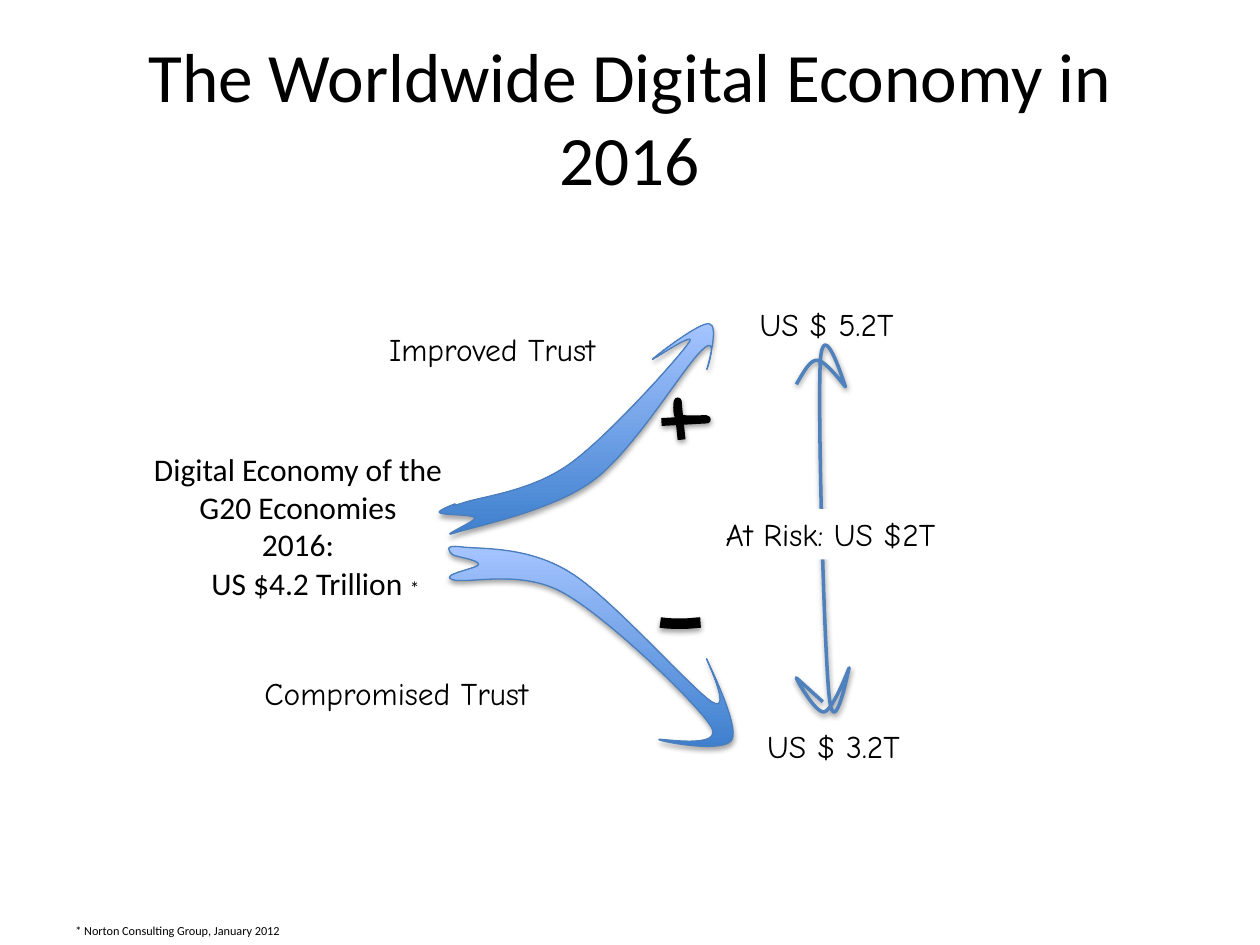
from dataclasses import dataclass

from lxml import etree
from pptx import Presentation
from pptx.dml.color import RGBColor
from pptx.enum.shapes import MSO_SHAPE
from pptx.enum.text import MSO_ANCHOR, PP_ALIGN
from pptx.oxml.ns import qn
from pptx.util import Inches, Pt

TOP, MIDDLE = MSO_ANCHOR.TOP, MSO_ANCHOR.MIDDLE
LEFT, CENTER = PP_ALIGN.LEFT, PP_ALIGN.CENTER
RECTANGLE = MSO_SHAPE.RECTANGLE

COLORS = {
    "text": "000000",
    "paper": "FFFFFF",
    "deep": "3F80CE",
    "pale": "A4C4FF",
    "edge": "4B7EBC",
    "range": "4F81BD",
}
BODY_FONT, HAND_FONT = "Calibri", "Comic Neue"


@dataclass
class Label:
    lines: list[str]
    left: float
    top: float
    width: float
    height: float = 0.4
    font: str = HAND_FONT
    size: float = 18
    align: PP_ALIGN = LEFT
    boxed: bool = False
    mark: str = ""


@dataclass
class Stroke:
    """An outline: a segment of two numbers is a line, one of six a cubic curve."""
    box: tuple[float, float, float, float]
    start: tuple[float, float]
    segments: list[tuple[float, ...]]
    color: str
    weight: float
    filled: bool = False


RISING_ARROW = Stroke((3.48, 2.57, 2.18, 1.67), (3.61, 4), [
    (3.64, 3.99, 3.53, 4.04, 3.68, 3.99), (3.83, 3.94, 4.21, 3.9, 4.51, 3.69),
    (4.8, 3.49, 5.35, 2.88, 5.46, 2.73), (5.57, 2.59, 5.15, 2.88, 5.18, 2.85),
    (5.21, 2.82, 5.56, 2.55, 5.63, 2.57), (5.71, 2.58, 5.62, 2.9, 5.61, 2.93),
    (5.6, 2.97, 5.72, 2.63, 5.57, 2.78), (5.42, 2.92, 5.03, 3.58, 4.7, 3.82),
    (4.37, 4.06, 3.76, 4.18, 3.61, 4.23), (3.45, 4.28, 3.79, 4.13, 3.77, 4.11),
    (3.75, 4.08, 3.51, 4.09, 3.49, 4.07), (3.46, 4.06, 3.58, 4.01, 3.61, 4),
], "edge", 0.75, filled=True)

FALLING_ARROW = Stroke((3.56, 4.34, 2.26, 1.58), (3.66, 4.34), [
    (3.81, 4.36, 4.18, 4.33, 4.52, 4.54), (4.85, 4.74, 5.47, 5.45, 5.65, 5.57),
    (5.83, 5.68, 5.58, 5.18, 5.61, 5.23), (5.63, 5.28, 5.87, 5.76, 5.81, 5.87),
    (5.75, 5.98, 5.26, 5.89, 5.23, 5.87), (5.2, 5.85, 5.77, 5.96, 5.64, 5.76),
    (5.52, 5.57, 4.82, 4.9, 4.48, 4.71), (4.14, 4.51, 3.7, 4.64, 3.59, 4.6),
    (3.48, 4.56, 3.8, 4.51, 3.8, 4.48), (3.8, 4.44, 3.61, 4.42, 3.59, 4.4),
    (3.57, 4.38, 3.51, 4.32, 3.66, 4.34),
], "edge", 0.75, filled=True)

RISK_RANGE = Stroke((6.32, 2.74, 0.42, 2.91), (6.32, 3.05), [
    (6.38, 2.95, 6.43, 2.85, 6.49, 2.86), (6.55, 2.86, 6.71, 3.07, 6.71, 3.07),
    (6.71, 3.08, 6.53, 2.47, 6.51, 2.88), (6.49, 3.29, 6.54, 5.12, 6.58, 5.52),
    (6.62, 5.92, 6.74, 5.28, 6.74, 5.3), (6.73, 5.32, 6.61, 5.64, 6.54, 5.65),
    (6.47, 5.66, 6.32, 5.39, 6.32, 5.38), (6.31, 5.37, 6.53, 5.57, 6.53, 5.57),
], "range", 2)

PLUS = Stroke((5.25, 3.18, 0.36, 0.3), (5.25, 3.35), [
    (5.61, 3.33), (5.63, 3.32, 5.44, 3.34, 5.4, 3.32),
    (5.36, 3.3, 5.38, 3.16, 5.38, 3.19), (5.38, 3.22, 5.41, 3.49, 5.41, 3.49),
], "text", 4.5)

MINUS = Stroke((5.24, 4.94, 0.32, 0.02), (5.24, 4.94), [
    (5.3, 4.95, 5.36, 4.95, 5.42, 4.95), (5.47, 4.95, 5.54, 4.94, 5.56, 4.94),
], "text", 6)

# Back to front: the boxed label interrupts the risk range.
DIAGRAM = [
    Label(["Digital Economy of the G20 Economies", "2016:"], 1.07, 3.52, 2.59, 1.01,
          BODY_FONT, align=CENTER),
    Label(["US $4.2 Trillion "], 1.58, 4.43, 1.93, font=BODY_FONT, mark="*"),
    RISING_ARROW,
    FALLING_ARROW,
    Label(["Improved Trust"], 2.99, 2.57, 2.27),
    Label(["Compromised Trust"], 2, 5.3, 2.86),
    Label(["US $ 5.2T"], 5.93, 2.37, 2.13),
    Label(["US $ 3.2T"], 5.99, 5.72, 2.13),
    RISK_RANGE,
    Label(["At Risk: US $2T"], 5.66, 4.04, 2.49, boxed=True),
    PLUS,
    MINUS,
    Label(["* Norton Consulting Group, January 2012"], 0.5, 7.28, 1.84, 0.22, BODY_FONT, 7),
]


def rgb(name: str) -> RGBColor:
    return RGBColor.from_string(COLORS[name])


def format_run(run, font: str, size: float) -> None:
    run.font.name = font
    run.font.size = Pt(size)
    run.font.color.rgb = rgb("text")


def draw_label(slide, label: Label) -> None:
    place = [Inches(v) for v in (label.left, label.top, label.width, label.height)]
    if label.boxed:
        box = slide.shapes.add_shape(RECTANGLE, *place)
        box.shadow.inherit = False
        box.fill.solid()
        box.fill.fore_color.rgb = rgb("paper")
        box.line.fill.background()
    else:
        box = slide.shapes.add_textbox(*place)
    frame = box.text_frame
    frame.word_wrap = True
    frame.vertical_anchor = TOP
    frame.text = "\n".join(label.lines)
    for paragraph in frame.paragraphs:
        paragraph.alignment = label.align
        format_run(paragraph.runs[0], label.font, label.size)
    if label.mark:
        footnote_mark = frame.paragraphs[0].add_run()
        footnote_mark.text = label.mark
        format_run(footnote_mark, label.font, 11)


def trace_outline(shape, stroke: Stroke) -> None:
    """Put the stroke's lines and cubic curves in the freeform's geometry."""
    left, top, width, height = stroke.box
    outline = shape._element.spPr.find(".//" + qn("a:path"))
    for segment in list(outline):
        outline.remove(segment)
    outline.set("w", str(Inches(width)))
    outline.set("h", str(Inches(height)))

    def add_segment(tag: str, coordinates: tuple[float, ...]) -> None:
        segment = etree.SubElement(outline, qn(tag))
        for x, y in zip(coordinates[::2], coordinates[1::2]):
            etree.SubElement(segment, qn("a:pt"), x=str(Inches(x - left)),
                             y=str(Inches(y - top)))

    add_segment("a:moveTo", stroke.start)
    for coordinates in stroke.segments:
        add_segment("a:lnTo" if len(coordinates) == 2 else "a:cubicBezTo", coordinates)
    if stroke.filled:
        etree.SubElement(outline, qn("a:close"))


def add_soft_shadow(shape, opacity: int, distance: float) -> None:
    shape.shadow.inherit = False
    effects = shape._element.spPr.find(qn("a:effectLst"))
    shadow = etree.SubElement(effects, qn("a:outerShdw"), blurRad=str(Pt(3.1)),
                              dist=str(Pt(distance)), dir="5400000", rotWithShape="0")
    color = etree.SubElement(shadow, qn("a:srgbClr"), val=COLORS["text"])
    etree.SubElement(color, qn("a:alpha"), val=str(opacity * 1000))


def draw_stroke(slide, stroke: Stroke) -> None:
    left, top, width, height = stroke.box
    builder = slide.shapes.build_freeform(Inches(left), Inches(top))
    builder.add_line_segments([(Inches(left + width), Inches(top + height))], close=False)
    shape = builder.convert_to_shape()
    trace_outline(shape, stroke)
    if stroke.filled:
        shape.fill.gradient()
        shape.fill.gradient_angle = 90
        for stop, name in zip(shape.fill.gradient_stops, ("deep", "pale")):
            stop.color.rgb = rgb(name)
    else:
        shape.fill.background()
    shape.line.color.rgb = rgb(stroke.color)
    shape.line.width = Pt(stroke.weight)
    add_soft_shadow(shape, *((35, 1.8) if stroke.filled else (38, 1.6)))


def draw_title(slide, text: str) -> None:
    title = slide.shapes.title
    title.left, title.top = Inches(0.5), Inches(0.3)
    title.width, title.height = Inches(9), Inches(1.25)
    frame = title.text_frame
    frame.text = text
    frame.word_wrap = True
    frame.vertical_anchor = MIDDLE
    frame.paragraphs[0].alignment = CENTER
    format_run(frame.paragraphs[0].runs[0], BODY_FONT, 39.6)


def main() -> None:
    deck = Presentation()
    deck.slide_width, deck.slide_height = Inches(10), Inches(7.5)
    slide = deck.slides.add_slide(deck.slide_layouts[5])
    draw_title(slide, "The Worldwide Digital Economy in 2016")
    for part in DIAGRAM:
        if isinstance(part, Label):
            draw_label(slide, part)
        else:
            draw_stroke(slide, part)
    deck.save("out.pptx")


if __name__ == "__main__":
    main()
